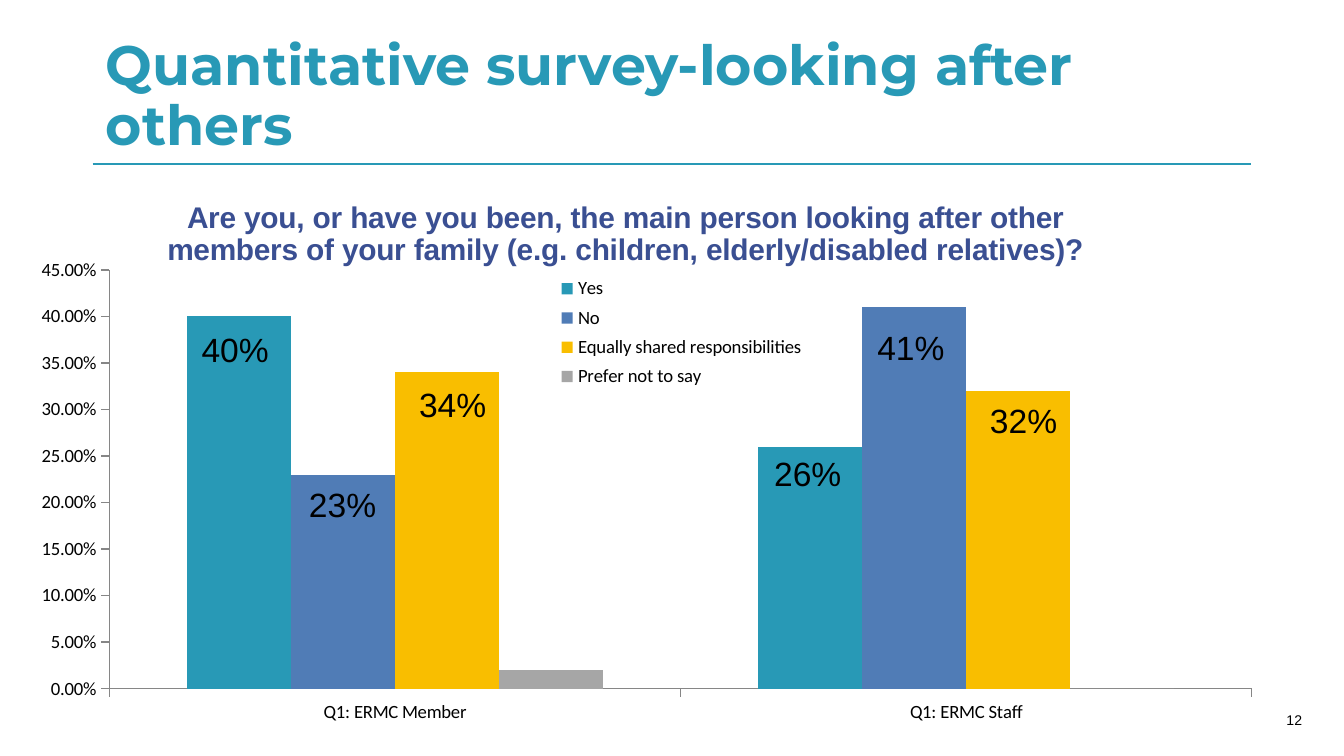
from dataclasses import dataclass

from lxml import etree
from pptx import Presentation
from pptx.chart.data import CategoryChartData
from pptx.dml.color import RGBColor
from pptx.enum.chart import XL_CHART_TYPE, XL_LEGEND_POSITION, XL_TICK_MARK
from pptx.enum.shapes import MSO_CONNECTOR
from pptx.enum.text import MSO_ANCHOR, MSO_AUTO_SIZE, PP_ALIGN
from pptx.oxml.ns import qn
from pptx.util import Cm, Pt

COLUMNS = XL_CHART_TYPE.COLUMN_CLUSTERED
LEGEND_RIGHT = XL_LEGEND_POSITION.RIGHT
TICK_OUT, TICK_NONE = XL_TICK_MARK.OUTSIDE, XL_TICK_MARK.NONE
STRAIGHT = MSO_CONNECTOR.STRAIGHT
MIDDLE, BOTTOM, TOP = MSO_ANCHOR.MIDDLE, MSO_ANCHOR.BOTTOM, MSO_ANCHOR.TOP
LEFT, RIGHT = PP_ALIGN.LEFT, PP_ALIGN.RIGHT
GROW = MSO_AUTO_SIZE.SHAPE_TO_FIT_TEXT


@dataclass(frozen=True)
class Theme:
    teal: str = "2899B6"
    blue: str = "507CB6"
    yellow: str = "F9BE00"
    gray: str = "A6A6A6"
    navy: str = "3A4F92"
    black: str = "000000"
    axis: str = "868686"
    heading: str = "Montserrat"
    body: str = "Arial"
    chart: str = "Calibri"
    heading_size: float = 29.7
    question_size: float = 16
    label_size: float = 18
    chart_size: float = 10
    number_size: float = 7.5


@dataclass(frozen=True)
class Box:
    """A region in centimetres."""
    x: float
    y: float
    w: float
    h: float

    def inner(self, dx, dy, w, h):
        return Box(self.x + dx, self.y + dy, w, h)

    def emu(self):
        return [Cm(v) for v in (self.x, self.y, self.w, self.h)]


T = Theme()
CATEGORIES = ["Q1: ERMC Member", "Q1: ERMC Staff"]
SERIES = [
    ("Yes", (0.40, 0.26), T.teal),
    ("No", (0.23, 0.41), T.blue),
    ("Equally shared responsibilities", (0.34, 0.32), T.yellow),
    ("Prefer not to say", (0.02, 0), T.gray),
]
QUESTION = ("Are you, or have you been, the main person looking after other "
            "members of your family (e.g. children, elderly/disabled relatives)?")
# Label offsets from the chart corner, per series and category
LABEL_OFFSETS = [
    [(3.10, 2.99), (13.92, 5.33)],
    [(5.13, 5.92), (15.87, 2.95)],
    [(7.21, 4.04), (18.00, 4.34)],
]


def style_font(font, name, size, color, bold=False):
    for key, value in {"name": name, "size": Pt(size), "bold": bold}.items():
        setattr(font, key, value)
    font.color.rgb = RGBColor.from_string(color)


def add_text(slide, box, text, font, align=LEFT, **frame):
    tf = slide.shapes.add_textbox(*box.emu()).text_frame
    for key, value in {"word_wrap": True, "vertical_anchor": TOP, **frame}.items():
        setattr(tf, key, value)
    p = tf.paragraphs[0]
    p.alignment = align
    r = p.add_run()
    r.text = text
    style_font(r.font, *font)
    return p


def set_layout(element, inner=False, **place):
    """Give a chart part a manual position, in fractions of the chart."""
    for old in element.findall(qn("c:layout")):
        element.remove(old)
    layout = etree.Element(qn("c:layout"))
    manual = etree.SubElement(layout, qn("c:manualLayout"))
    values = {"layoutTarget": "inner"} if inner else {}
    values.update({f"{axis}Mode": "edge" for axis in "xy"})
    values.update(place)
    for tag, value in values.items():
        etree.SubElement(manual, qn(f"c:{tag}")).set("val", str(value))
    before = [element.find(qn(f"c:{tag}")) for tag in ("tx", "legendPos")]
    previous = next((e for e in before if e is not None), None)
    if previous is None:
        element.insert(0, layout)
    else:
        previous.addnext(layout)


def add_header(slide, box):
    p = add_text(slide, box, "Quantitative survey-looking after others",
                 (T.heading, T.heading_size, T.teal, True), vertical_anchor=BOTTOM)
    p.line_spacing = 0.9
    # Rule under the heading
    y = Cm(box.y + box.h)
    rule = slide.shapes.add_connector(STRAIGHT, Cm(box.x), y, Cm(box.x + box.w), y)
    rule.line.color.rgb = RGBColor.from_string(T.teal)
    rule.line.width = Pt(1)
    etree.SubElement(rule._element.spPr, qn("a:effectLst"))


def style_axis(axis):
    axis.has_major_gridlines = False
    axis.major_tick_mark, axis.minor_tick_mark = TICK_OUT, TICK_NONE
    axis.format.line.color.rgb = RGBColor.from_string(T.axis)
    axis.format.line.width = Pt(0.75)


def add_survey_chart(slide, box):
    data = CategoryChartData(number_format="0.00%")
    data.categories = CATEGORIES
    for name, values, _ in SERIES:
        data.add_series(name, values)
    chart = slide.shapes.add_chart(COLUMNS, *box.emu(), data).chart
    style_font(chart.font, T.chart, T.chart_size, T.black)

    # Question as the chart title
    chart.has_title = True
    title = chart.chart_title
    r = title.text_frame.paragraphs[0].add_run()
    r.text = QUESTION
    style_font(r.font, T.body, T.question_size, T.navy, True)
    set_layout(title._element, x=0.11, y=0.05)

    # Columns
    plot = chart.plots[0]
    for key, value in {"gap_width": 150, "overlap": 0, "vary_by_categories": False}.items():
        setattr(plot, key, value)
    for series, (_, _, color) in zip(plot.series, SERIES):
        series.format.fill.solid()
        series.format.fill.fore_color.rgb = RGBColor.from_string(color)
    set_layout(chart._chartSpace.chart.plotArea, inner=True,
               x=0.068, y=0.186, w=0.913, h=0.735)

    # Axes
    style_axis(chart.category_axis)
    style_axis(chart.value_axis)
    for key, value in {"minimum_scale": 0, "maximum_scale": 0.45, "major_unit": 0.05}.items():
        setattr(chart.value_axis, key, value)
    labels = chart.value_axis.tick_labels
    labels.number_format, labels.number_format_is_linked = "0.00%", False

    # Legend between the two groups
    chart.has_legend = True
    chart.legend.position = LEGEND_RIGHT
    chart.legend.include_in_layout = False
    set_layout(chart.legend._element, x=0.415, y=0.186, w=0.22, h=0.22)


def add_bar_labels(slide, box):
    for (_, values, _), offsets in zip(SERIES, LABEL_OFFSETS):
        for value, (dx, dy) in zip(values, offsets):
            add_text(slide, box.inner(dx, dy, 1.8, 1.02), f"{value:.0%}",
                     (T.body, T.label_size, T.black), word_wrap=False, auto_size=GROW)


def add_slide_number(slide, box):
    add_text(slide, box, "12", (T.body, T.number_size, T.black), RIGHT,
             vertical_anchor=MIDDLE, margin_right=0)


def main():
    prs = Presentation()
    prs.slide_width, prs.slide_height = Cm(25.4), Cm(14.29)
    slide = prs.slides.add_slide(prs.slide_layouts[6])
    chart_box = Box(0.46, 3.1, 23.65, 10.77)
    add_slide_number(slide, Box(18.9, 13.23, 5.71, 0.76))
    add_header(slide, Box(1.75, 0.76, 21.9, 2.34))
    add_survey_chart(slide, chart_box)
    add_bar_labels(slide, chart_box)
    prs.save("out.pptx")


if __name__ == "__main__":
    main()
